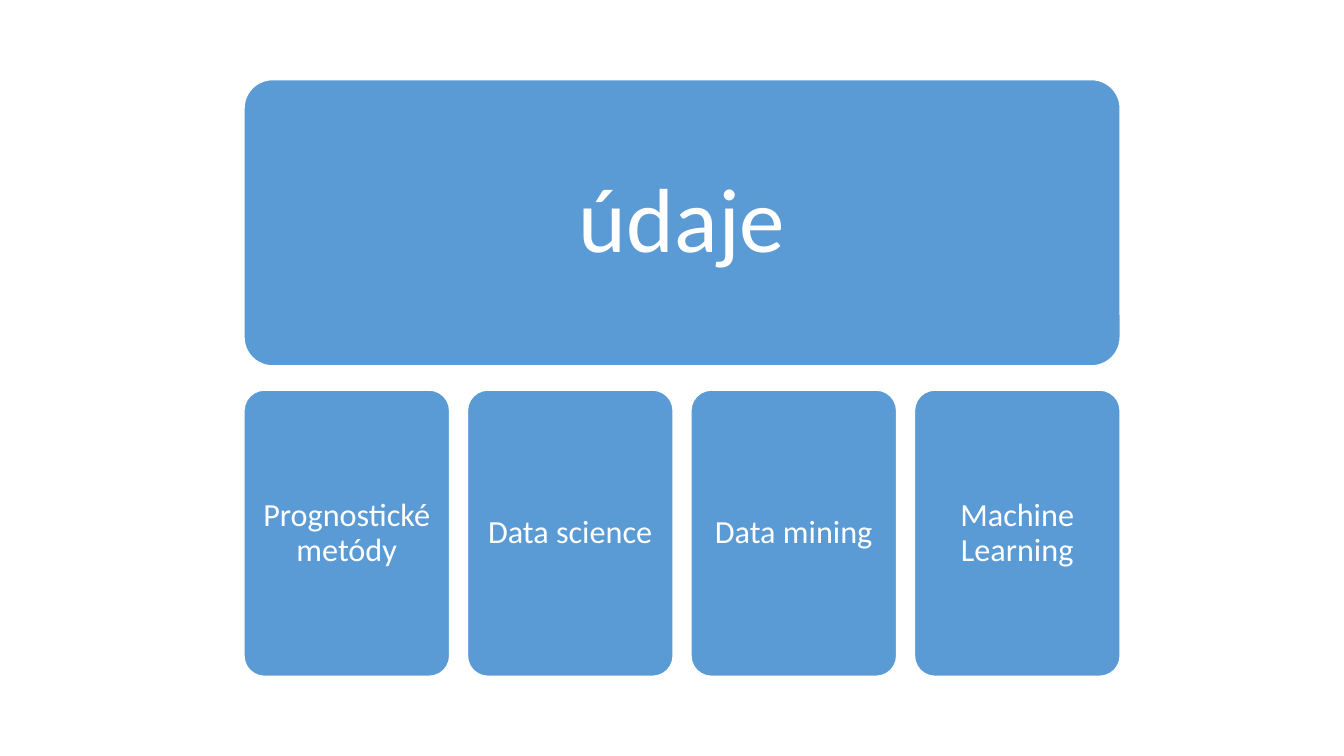
from pptx import Presentation
from pptx.dml.color import RGBColor
from pptx.enum.shapes import MSO_SHAPE
from pptx.enum.text import MSO_ANCHOR, PP_ALIGN
from pptx.util import Inches, Pt

ROUNDED = MSO_SHAPE.ROUNDED_RECTANGLE
MIDDLE = MSO_ANCHOR.MIDDLE
CENTER = PP_ALIGN.CENTER
BLUE = RGBColor(0x5B, 0x9B, 0xD5)
WHITE = RGBColor(0xFF, 0xFF, 0xFF)
FONT = "Calibri"
BLANK_LAYOUT = 6

HEADING = "údaje"
METHODS = ["Prognostické metódy", "Data science", "Data mining", "Machine Learning"]
DIAGRAM_BOX = (2.42, 0.79, 8.69, 5.92)
CARD_HEIGHT = 2.84
CARD_WIDTH = 2.04


def add_card(slide, box, text, size, inset):
    """Draw a rounded card with centred text in the given box."""
    shape = slide.shapes.add_shape(ROUNDED, *(Inches(length) for length in box))
    shape.adjustments[0] = 0.1
    shape.shadow.inherit = False
    shape.fill.solid()
    shape.fill.fore_color.rgb = BLUE
    shape.line.color.rgb = WHITE
    shape.line.width = Pt(1)

    frame = shape.text_frame
    frame.word_wrap = True
    frame.vertical_anchor = MIDDLE
    frame.margin_left = frame.margin_right = Inches(inset)
    frame.margin_top = frame.margin_bottom = Inches(inset)
    paragraph = frame.paragraphs[0]
    paragraph.alignment = CENTER
    paragraph.line_spacing = 0.9
    run = paragraph.add_run()
    run.text = text
    run.font.name = FONT
    run.font.size = Pt(size)
    run.font.color.rgb = WHITE


def add_method_row(slide, box, methods):
    """Spread one card per method evenly across the box."""
    left, top, width, height = box
    pitch = (width - CARD_WIDTH) / (len(methods) - 1)
    for column, method in enumerate(methods):
        card_box = (left + column * pitch, top, CARD_WIDTH, height)
        add_card(slide, card_box, method, 23, 0.1)


def add_diagram(slide, box):
    """Place the heading card above the row of methods."""
    left, top, width, height = box
    add_card(slide, (left, top, width, CARD_HEIGHT), HEADING, 65, 0.27)
    row_top = top + height - CARD_HEIGHT
    add_method_row(slide, (left, row_top, width, CARD_HEIGHT), METHODS)


def main():
    """Build and save the presentation."""
    presentation = Presentation()
    presentation.slide_width = Inches(13.33)
    presentation.slide_height = Inches(7.5)
    slide = presentation.slides.add_slide(presentation.slide_layouts[BLANK_LAYOUT])
    add_diagram(slide, DIAGRAM_BOX)
    presentation.save("out.pptx")


if __name__ == "__main__":
    main()
